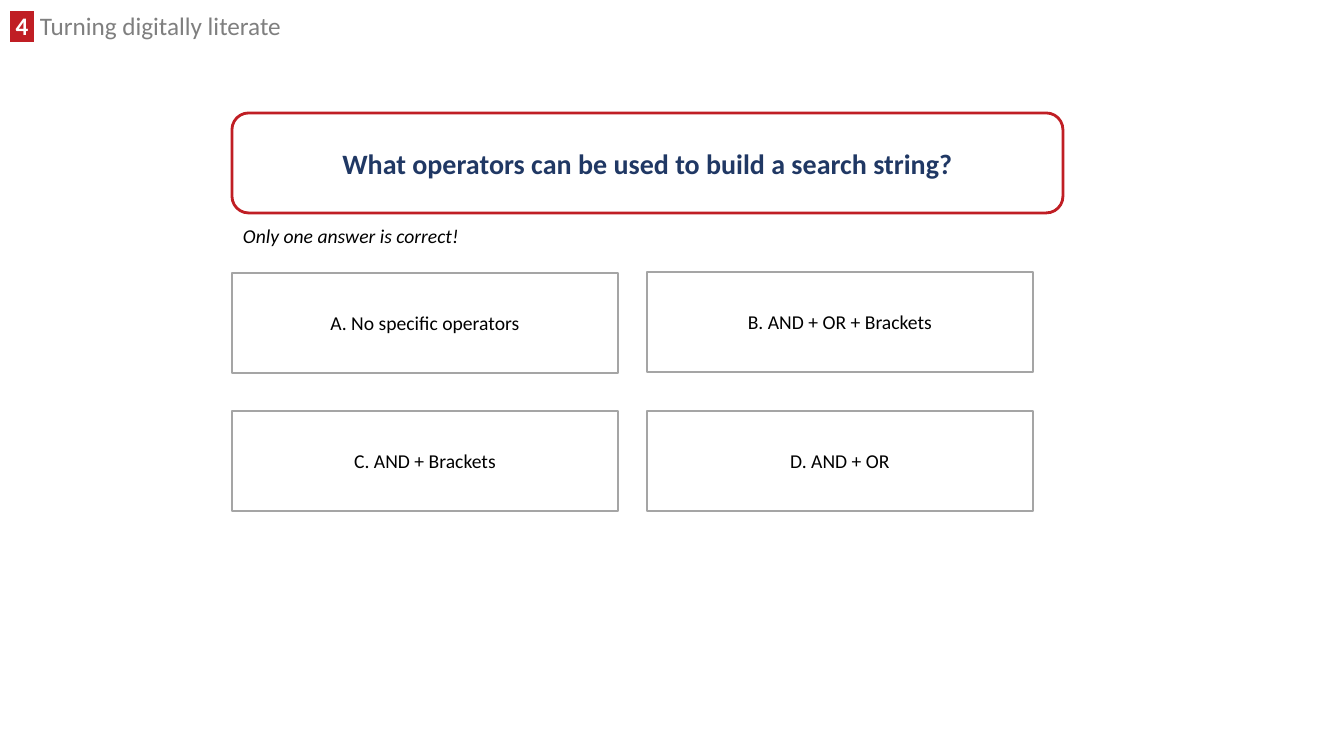
from lxml.etree import SubElement
from pptx import Presentation
from pptx.dml.color import RGBColor
from pptx.enum.shapes import MSO_SHAPE
from pptx.enum.text import MSO_ANCHOR, MSO_AUTO_SIZE, PP_ALIGN
from pptx.oxml.ns import qn
from pptx.util import Pt

PX = 914400 / 100.8
COLORS = {
    "red": "C01E24",
    "navy": "203864",
    "heading": "7F7F7F",
    "border": "A5A5A5",
    "black": "000000",
    "white": "FFFFFF",
}


def format_span(span, size, color, bold=False, italic=False):
    span.font.name = "Calibri"
    span.font.size = Pt(size)
    span.font.bold = bold
    span.font.italic = italic
    span.font.color.rgb = RGBColor.from_string(COLORS[color])


def add_panel(shape_type, bounds, text, line_color, size, text_color, bold=False):
    panel = page.shapes.add_shape(shape_type, *[round(value * PX) for value in bounds])
    panel.shadow.inherit = False
    panel.fill.solid()
    panel.fill.fore_color.rgb = RGBColor.from_string(COLORS["white"])
    panel.line.color.rgb = RGBColor.from_string(COLORS[line_color])
    panel.line.width = Pt(2)
    frame = panel.text_frame
    frame.word_wrap = True
    frame.vertical_anchor = MSO_ANCHOR.MIDDLE
    frame.text = text
    para = frame.paragraphs[0]
    para.alignment = PP_ALIGN.CENTER
    format_span(para.runs[0], size, text_color, bold)


deck = Presentation()
deck.slide_width = round(1344 * PX)
deck.slide_height = round(756 * PX)
page = deck.slides.add_slide(deck.slide_layouts[5])

title = page.shapes.title
title.left, title.top, title.width, title.height = [
    round(value * PX) for value in (0, 11, 960, 35)
]
frame = title.text_frame
frame.word_wrap = True
frame.auto_size = MSO_AUTO_SIZE.SHAPE_TO_FIT_TEXT
frame.vertical_anchor = MSO_ANCHOR.TOP
para = frame.paragraphs[0]
para.alignment = PP_ALIGN.LEFT
para.line_spacing = 0.8
number = para.add_run()
number.text = " 4 "
format_span(number, 18, "white", bold=True)
properties = number.font._element
highlight = SubElement(properties, qn("a:highlight"))
SubElement(highlight, qn("a:srgbClr"), val=COLORS["red"])
properties.find(qn("a:solidFill")).addnext(highlight)
heading = para.add_run()
heading.text = " Turning digitally literate"
format_span(heading, 18, "heading")

add_panel(
    MSO_SHAPE.ROUNDED_RECTANGLE,
    (232, 113, 831, 100),
    "What operators can be used to build a search string?",
    "red", 20, "navy", bold=True,
)

box = page.shapes.add_textbox(*[round(value * PX) for value in (233, 219, 238, 34)])
box.text_frame.word_wrap = False
box.text_frame.auto_size = MSO_AUTO_SIZE.SHAPE_TO_FIT_TEXT
box.text_frame.text = "Only one answer is correct!"
format_span(box.text_frame.paragraphs[0].runs[0], 14, "black", italic=True)

answers = [
    (232, 273, "A. No specific operators"),
    (647, 272, "B. AND + OR + Brackets"),
    (232, 411, "C. AND + Brackets"),
    (647, 411, "D. AND + OR"),
]
for left, top, text in answers:
    add_panel(MSO_SHAPE.RECTANGLE, (left, top, 386, 100), text, "border", 14, "black")

deck.save("out.pptx")
